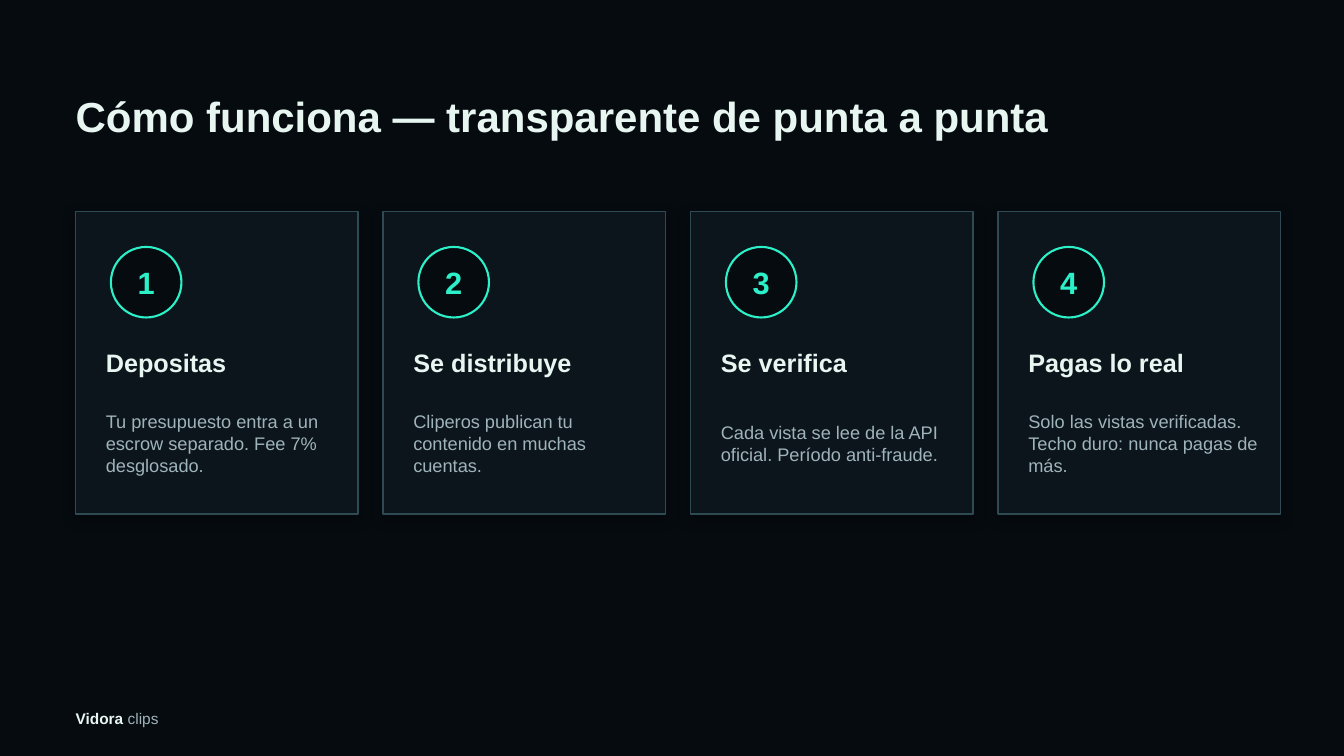
from lxml.etree import SubElement
from pptx import Presentation
from pptx.dml.color import RGBColor
from pptx.enum.shapes import MSO_SHAPE
from pptx.enum.text import MSO_ANCHOR, MSO_AUTO_SIZE, PP_ALIGN
from pptx.oxml.ns import qn
from pptx.util import Inches, Pt

NIGHT = RGBColor(0x06, 0x0B, 0x10)
PANEL = RGBColor(0x0C, 0x15, 0x1B)
BORDER = RGBColor(0x2E, 0x4A, 0x52)
MINT = RGBColor(0x2B, 0xF0, 0xC8)
LIGHT = RGBColor(0xE8, 0xF6, 0xF2)
MUTED = RGBColor(0x9F, 0xB4, 0xBA)

LEFT = 0.75
CARD_TOP = 2.1
CARD_W, CARD_H, GAP = 2.8, 3, 0.25

STEPS = [
    ("Depositas", "Tu presupuesto entra a un escrow separado. Fee 7% desglosado."),
    ("Se distribuye", "Cliperos publican tu contenido en muchas cuentas."),
    ("Se verifica", "Cada vista se lee de la API oficial. Período anti-fraude."),
    ("Pagas lo real", "Solo las vistas verificadas. Techo duro: nunca pagas de más."),
]


def set_text(sp, text, size, color, bold=False, align=PP_ALIGN.LEFT):
    tf = sp.text_frame
    tf.word_wrap = True
    tf.auto_size = MSO_AUTO_SIZE.NONE
    tf.vertical_anchor = MSO_ANCHOR.MIDDLE
    tf.margin_left = tf.margin_top = tf.margin_right = tf.margin_bottom = 0
    p = tf.paragraphs[0]
    p.text = text
    p.alignment = align
    font = p.font
    font.name, font.size, font.bold = "Arial", Pt(size), bold
    font.color.rgb = color
    return p


def add_text(s, x, y, w, h, *args, **kwargs):
    box = s.shapes.add_textbox(Inches(x), Inches(y), Inches(w), Inches(h))
    return set_text(box, *args, **kwargs)


def add_box(s, kind, x, y, w, h, fill, line, weight):
    sp = s.shapes.add_shape(kind, Inches(x), Inches(y), Inches(w), Inches(h))
    sp.shadow.inherit = False
    sp.fill.solid()
    sp.fill.fore_color.rgb = fill
    sp.line.color.rgb = line
    sp.line.width = Pt(weight)
    return sp


def add_shadow(sp):
    effects = sp.element.spPr.find(qn("a:effectLst"))
    shadow = SubElement(effects, qn("a:outerShdw"), blurRad=str(Pt(10)),
                        dist=str(Pt(3)), dir="5400000", rotWithShape="0")
    color = SubElement(shadow, qn("a:srgbClr"), val="000000")
    SubElement(color, qn("a:alpha"), val="35000")


def add_step(s, number, x, heading, detail):
    card = add_box(s, MSO_SHAPE.RECTANGLE, x, CARD_TOP, CARD_W, CARD_H, PANEL, BORDER, 1)
    add_shadow(card)
    badge = add_box(s, MSO_SHAPE.OVAL, x + 0.35, CARD_TOP + 0.35, 0.7, 0.7, NIGHT, MINT, 1.5)
    set_text(badge, str(number), 22, MINT, bold=True, align=PP_ALIGN.CENTER)
    add_text(s, x + 0.3, CARD_TOP + 1.25, 2.3, 0.5, heading, 18, LIGHT, bold=True)
    add_text(s, x + 0.3, CARD_TOP + 1.75, 2.3, 1.1, detail, 13, MUTED)


def add_title(s, text):
    title = s.shapes.title
    title.left, title.top = Inches(LEFT), Inches(0.7)
    title.width, title.height = Inches(11.8), Inches(0.9)
    set_text(title, text, 30, LIGHT, bold=True)


def add_footer(s):
    p = add_text(s, LEFT, 6.95, 3, 0.35, "Vidora", 11, MUTED)
    brand = p.runs[0].font
    brand.bold = True
    brand.color.rgb = LIGHT
    r = p.add_run()
    r.text = " clips"
    # Run fonts carry the size and face shared by both words
    for r in p.runs:
        r.font.name, r.font.size = "Arial", Pt(11)
    r.font.color.rgb = MUTED


def main():
    prs = Presentation()
    prs.slide_width, prs.slide_height = Inches(13.33), Inches(7.5)
    s = prs.slides.add_slide(prs.slide_layouts[5])
    s.background.fill.solid()
    s.background.fill.fore_color.rgb = NIGHT

    # Title and footer
    add_title(s, "Cómo funciona — transparente de punta a punta")
    add_footer(s)

    # Four numbered steps, left to right
    for i, (heading, detail) in enumerate(STEPS):
        add_step(s, i + 1, LEFT + i * (CARD_W + GAP), heading, detail)

    prs.save("out.pptx")


if __name__ == "__main__":
    main()
